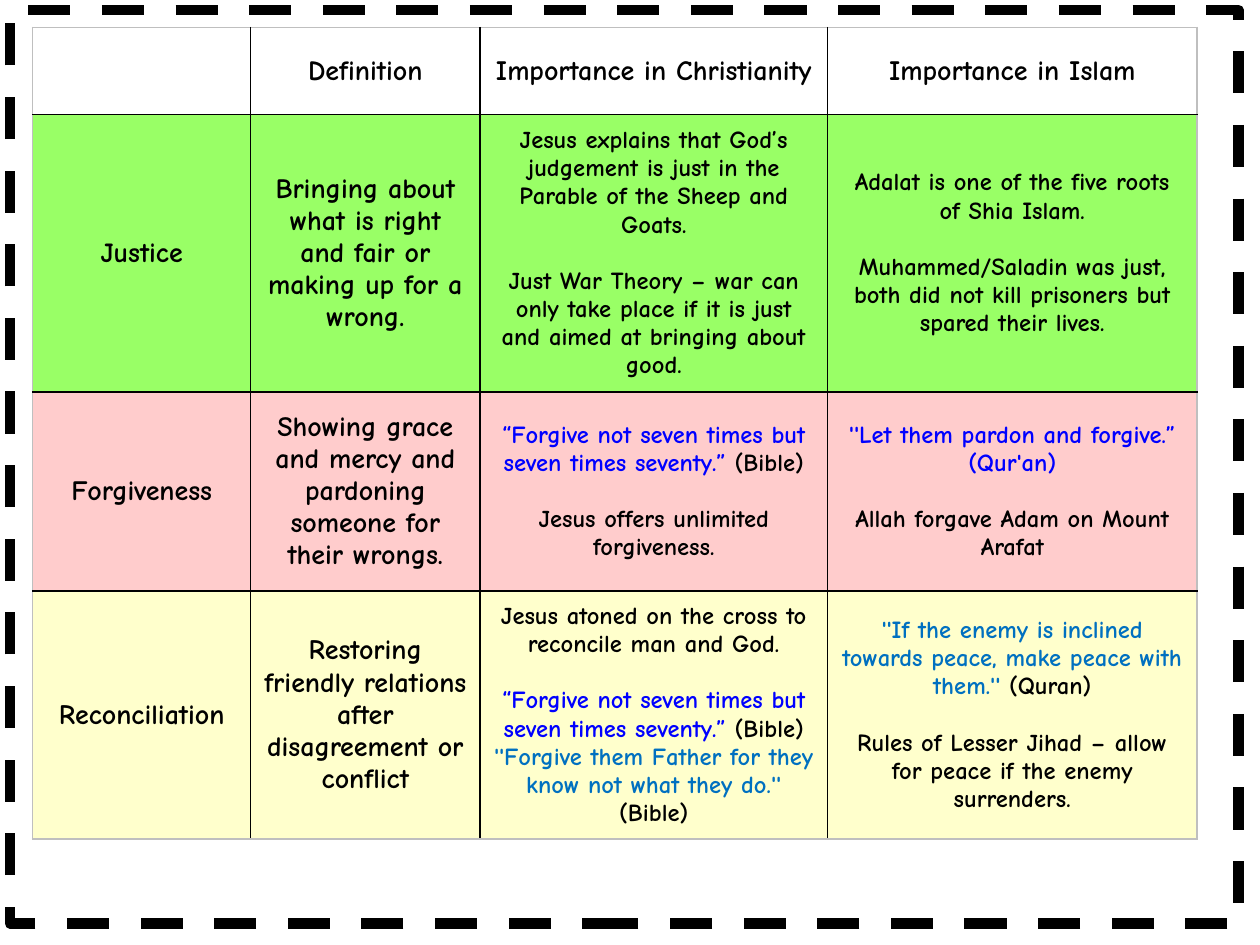
from dataclasses import dataclass

from lxml import etree
from pptx import Presentation
from pptx.dml.color import RGBColor
from pptx.enum.dml import MSO_LINE
from pptx.enum.shapes import MSO_SHAPE
from pptx.enum.text import MSO_ANCHOR, PP_ALIGN
from pptx.oxml.ns import qn
from pptx.util import Inches, Pt

DASH = MSO_LINE.DASH
RECT = MSO_SHAPE.RECTANGLE
MIDDLE = MSO_ANCHOR.MIDDLE
CENTER = PP_ALIGN.CENTER
COLORS = {
    "black": "000000", "edge": "BFBFBF", "blue": "0000FF", "sky": "0070C0",
    "green": "99FF66", "pink": "FFCCCC", "cream": "FFFFCC",
}
FONT = {"name": "Comic Neue", "bold": True}
LABEL_SIZE, DETAIL_SIZE = 16, 14
COL_WIDTHS = [1.73, 1.82, 2.76, 2.93]
ROW_HEIGHTS = [0.69, 2.2, 1.58, 1.97]
HEADERS = ["", "Definition", "Importance in Christianity", "Importance in Islam"]


@dataclass
class Para:
    text: str
    color: str = "black"
    source: str = ""
    gap: int = 0


@dataclass
class Concept:
    name: str
    definition: str
    christianity: list[Para]
    islam: list[Para]
    fill: str


SEVENTY = "“Forgive not seven times but seven times seventy.” "
CONCEPTS = [
    Concept(
        "Justice", "Bringing about what is right and fair or making up for a wrong.",
        [Para("Jesus explains that God’s judgement is just in the Parable of the Sheep and Goats."),
         Para("Just War Theory – war can only take place if it is just and aimed at bringing about good.",
              gap=16)],
        [Para("Adalat is one of the five roots of Shia Islam."),
         Para("Muhammed/Saladin was just, both did not kill prisoners but spared their lives.", gap=16)],
        "green"),
    Concept(
        "Forgiveness", "Showing grace and mercy and pardoning someone for their wrongs.",
        [Para(SEVENTY, "blue", "(Bible)"),
         Para("Jesus offers unlimited forgiveness.", gap=16)],
        [Para("''Let them pardon and forgive.” (Qur'an)", "blue"),
         Para("Allah forgave Adam on Mount Arafat", gap=16)],
        "pink"),
    Concept(
        "Reconciliation", "Restoring friendly relations after disagreement or conflict",
        [Para("Jesus atoned on the cross to reconcile man and God."),
         Para(SEVENTY, "blue", "(Bible)", 16),
         Para("''Forgive them Father for they know not what they do.'' ", "sky", "(Bible)")],
        [Para("''If the enemy is inclined towards peace, make peace with them.'' ", "sky", "(Quran)"),
         Para("Rules of Lesser Jihad – allow for peace if the enemy surrenders.", gap=16)],
        "cream"),
]


def rgb(name: str) -> RGBColor:
    return RGBColor.from_string(COLORS[name])


def add_run(p, text: str, size: int, color: str) -> None:
    r = p.add_run()
    r.text = text
    for key, value in {**FONT, "size": Pt(size)}.items():
        setattr(r.font, key, value)
    r.font.color.rgb = rgb(color)


def fill_cell(cell, paras: list[Para], size: int, fill: str) -> None:
    cell.vertical_anchor = MIDDLE
    if fill:
        cell.fill.solid()
        cell.fill.fore_color.rgb = rgb(fill)
    else:
        cell.fill.background()
    tf = cell.text_frame
    for i, para in enumerate(paras):
        p = tf.add_paragraph() if i else tf.paragraphs[0]
        p.alignment = CENTER
        if para.gap:
            p.space_before = Pt(para.gap)
        if para.text:
            add_run(p, para.text, size, para.color)
        if para.source:
            add_run(p, para.source, size, "black")


def set_borders(cell, outer: dict[str, bool]) -> None:
    tc_pr = cell._tc.get_or_add_tcPr()
    for i, (side, is_outer) in enumerate(outer.items()):
        ln = etree.Element(qn(f"a:{side}"), w=str(Pt(1)))
        solid = etree.SubElement(ln, qn("a:solidFill"))
        etree.SubElement(solid, qn("a:srgbClr"), val=COLORS["edge" if is_outer else "black"])
        tc_pr.insert(i, ln)


def add_frame(s) -> None:
    frame = s.shapes.add_shape(RECT, Inches(0.08), Inches(0.08), Inches(9.75), Inches(7.25))
    frame.shadow.inherit = False
    frame.fill.background()
    frame.line.color.rgb = rgb("black")
    frame.line.width = Pt(6)
    frame.line.dash_style = DASH


def add_concept_table(s) -> None:
    rows, cols = len(ROW_HEIGHTS), len(COL_WIDTHS)
    table = s.shapes.add_table(rows, cols, Inches(0.26), Inches(0.22),
                               Inches(sum(COL_WIDTHS)), Inches(sum(ROW_HEIGHTS))).table
    table.first_row = table.horz_banding = False
    for column, width in zip(table.columns, COL_WIDTHS):
        column.width = Inches(width)
    for row, height in zip(table.rows, ROW_HEIGHTS):
        row.height = Inches(height)

    grid = [([[Para(text)] for text in HEADERS], "")]
    grid += [([[Para(c.name)], [Para(c.definition)], c.christianity, c.islam], c.fill)
             for c in CONCEPTS]
    for i, (contents, fill) in enumerate(grid):
        for j, paras in enumerate(contents):
            cell = table.cell(i, j)
            size = DETAIL_SIZE if i > 0 and j > 1 else LABEL_SIZE
            fill_cell(cell, paras, size, fill)
            set_borders(cell, {"lnL": j == 0, "lnR": j == cols - 1,
                               "lnT": i == 0, "lnB": i == rows - 1})


def main() -> None:
    prs = Presentation()
    prs.slide_width, prs.slide_height = Inches(10), Inches(7.5)
    s = prs.slides.add_slide(prs.slide_layouts[6])
    add_frame(s)
    add_concept_table(s)
    prs.save("out.pptx")


if __name__ == "__main__":
    main()
